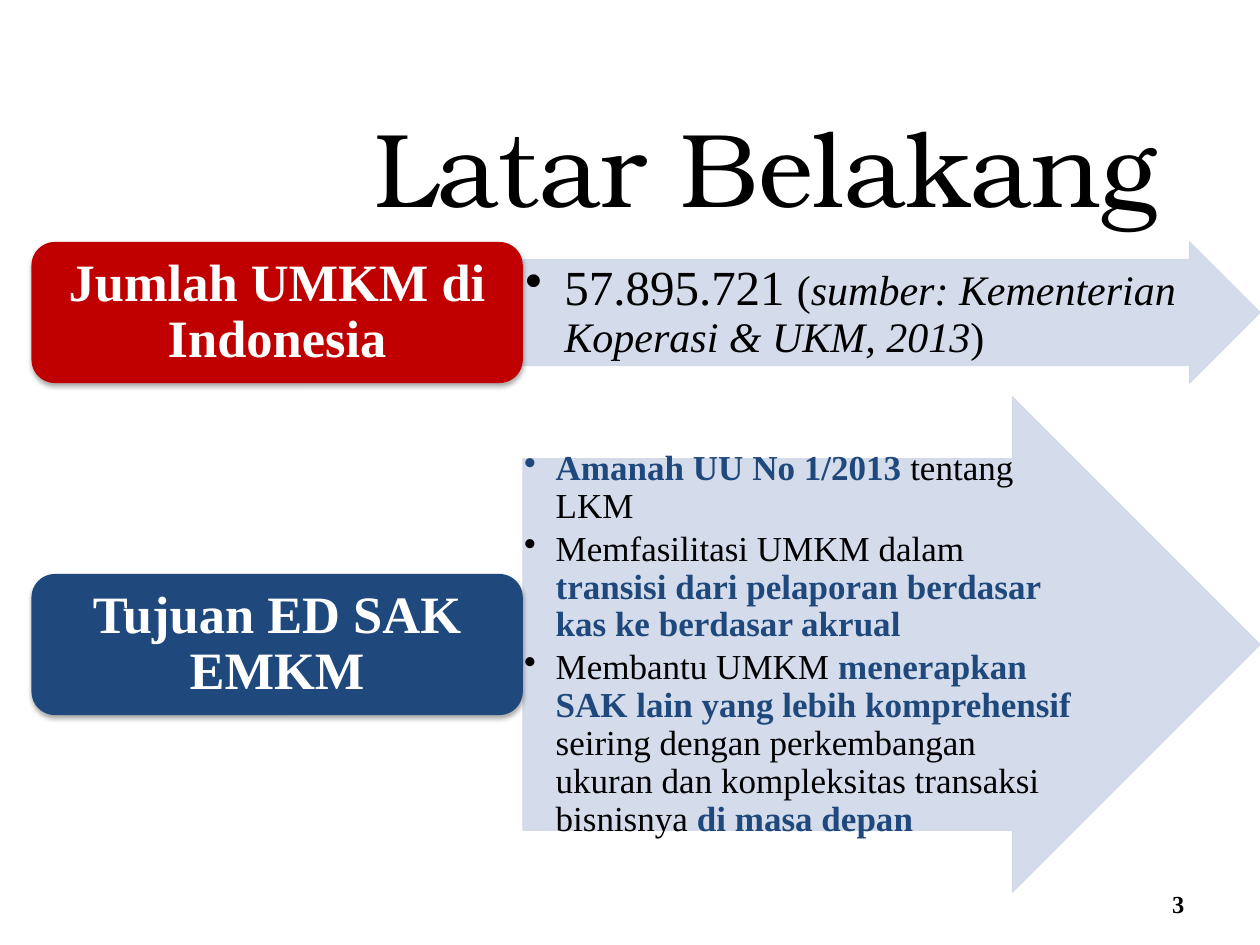
import pptx
import pptx.util
import pptx.dml.color
import pptx.enum.shapes
import pptx.enum.text
import pptx.oxml
import pptx.oxml.ns

Inches, Pt = pptx.util.Inches, pptx.util.Pt
SHAPE = pptx.enum.shapes.MSO_SHAPE
ALIGN = pptx.enum.text.PP_ALIGN
NS = pptx.oxml.ns.nsdecls("a")
qn = pptx.oxml.ns.qn

HEX = {"black": "000000", "white": "FFFFFF", "red": "C00000",
       "navy": "1F497D", "pale": "D0D8E8"}
SERIF = "Times New Roman"
LABEL = {"name": SERIF, "size": Pt(30), "bold": True}
SMALL = {"name": SERIF, "size": Pt(24)}
BODY = {"name": SERIF, "size": Pt(20)}
KEY = {**BODY, "bold": True}
WIDE, HIGH = 10, 7.5
SHARE = 0.4      # label's share of a row's width
LABEL_H = 1.12


def tint(part, name):
    part.rgb = pptx.dml.color.RGBColor.from_string(HEX[name])


def write(para, runs, form):
    """Add (text, font values, colour) runs to a paragraph."""
    for key, value in form.items():
        setattr(para, key, value)
    for text, font, hue in runs:
        run = para.add_run()
        run.text = text
        for key, value in font.items():
            setattr(run.font, key, value)
        tint(run.font.color, hue)


def frame(shape, pad_x=0.1, pad_y=0.05):
    body = shape.text_frame
    form = {"word_wrap": True, "auto_size": pptx.enum.text.MSO_AUTO_SIZE.NONE,
            "vertical_anchor": pptx.enum.text.MSO_ANCHOR.MIDDLE,
            "margin_left": Inches(pad_x), "margin_right": Inches(pad_x),
            "margin_top": Inches(pad_y), "margin_bottom": Inches(pad_y)}
    for key, value in form.items():
        setattr(body, key, value)
    return body


def block(slide, kind, box, hue):
    shape = slide.shapes.add_shape(kind, *map(Inches, box))
    shape.shadow.inherit = False
    shape.fill.solid()
    tint(shape.fill.fore_color, hue)
    return shape


def label(slide, box, text, hue):
    shape = block(slide, SHAPE.ROUNDED_RECTANGLE, box, hue)
    shape.line.fill.background()
    shape._element.spPr.find(qn("a:effectLst")).append(pptx.oxml.parse_xml(
        f'<a:outerShdw {NS} blurRad="{Pt(3.1)}" dist="{Pt(1.8)}" dir="5400000" '
        f'rotWithShape="0"><a:srgbClr val="{HEX["black"]}"><a:alpha val="35000"/>'
        '</a:srgbClr></a:outerShdw>'))
    write(frame(shape, 0.12, 0.06).paragraphs[0], [(text, LABEL, "white")],
          {"alignment": ALIGN.CENTER, "line_spacing": 0.9})


def arrow(slide, box, items, pad, dent):
    shape = block(slide, SHAPE.RIGHT_ARROW, box, "pale")
    shape.adjustments[0] = 0.75
    shape.line.width = Pt(0.75)
    tint(shape.line.color, "pale")
    for clr in shape._element.spPr.iter(qn("a:srgbClr")):
        clr.append(pptx.oxml.parse_xml(f'<a:alpha {NS} val="90000"/>'))
    body = frame(shape, pad, pad)
    for i, runs in enumerate(items):
        para = body.add_paragraph() if i else body.paragraphs[0]
        props = para._p.get_or_add_pPr()
        props.set("marL", str(Inches(dent)))
        props.set("indent", str(-Inches(dent)))
        props.append(pptx.oxml.parse_xml(f'<a:buChar {NS} char="•"/>'))
        write(para, runs, {"alignment": ALIGN.LEFT, "line_spacing": 0.9,
                           "space_after": Pt(3)})


def row(slide, box, text, hue, items, pad, dent):
    """Place an arrow of bullets with a label centred at its left."""
    x, y, w, h = box
    cut = w * SHARE
    arrow(slide, (x + cut, y, w - cut, h), items, pad, dent)
    label(slide, (x, y + (h - LABEL_H) / 2, cut, LABEL_H), text, hue)


def head(slide, box, text):
    title = slide.shapes.title
    for key, value in zip(("left", "top", "width", "height"), box):
        setattr(title, key, Inches(value))
    font = {"name": "TeX Gyre Bonum", "size": Pt(60)}
    write(frame(title).paragraphs[0], [(text, font, "black")],
          {"alignment": ALIGN.CENTER})


def number(slide, box, text):
    shape = slide.shapes.add_textbox(*map(Inches, box))
    write(frame(shape).paragraphs[0], [(text, {**KEY, "size": Pt(14)}, "black")],
          {"alignment": ALIGN.RIGHT})


def main():
    deck = pptx.Presentation()
    deck.slide_width, deck.slide_height = Inches(WIDE), Inches(HIGH)
    slide = deck.slides.add_slide(deck.slide_layouts[5])
    left = WIDE * 0.025
    span = WIDE - left
    count = [[
        ("57.895.721 ", {**SMALL, "size": Pt(28)}, "black"),
        ("(", SMALL, "black"),
        ("sumber: Kementerian Koperasi & UKM, 2013",
         {**SMALL, "italic": True}, "black"),
        (")", SMALL, "black")]]
    goals = [
        [("Amanah UU No 1/2013 ", KEY, "navy"), ("tentang LKM", BODY, "black")],
        [("Memfasilitasi UMKM dalam ", BODY, "black"),
         ("transisi dari pelaporan berdasar kas ke berdasar akrual", KEY, "navy")],
        [("Membantu UMKM ", BODY, "black"),
         ("menerapkan SAK lain yang lebih komprehensif ", KEY, "navy"),
         ("seiring dengan perkembangan ukuran dan kompleksitas transaksi "
          "bisnisnya ", BODY, "black"),
         ("di masa depan", KEY, "navy")]]
    row(slide, (left, 1.92, span, LABEL_H), "Jumlah UMKM di Indonesia", "red",
        count, 0.02, 0.31)
    row(slide, (left, 3.15, span, 3.93), "Tujuan ED SAK EMKM", "navy",
        goals, 0.01, 0.25)
    head(slide, (1.58, 0.88, WIDE * 0.9, 0.87), "Latar Belakang")
    number(slide, (8.9, 6.97, 0.6, 0.4), "3")
    deck.save("out.pptx")


if __name__ == "__main__":
    main()
